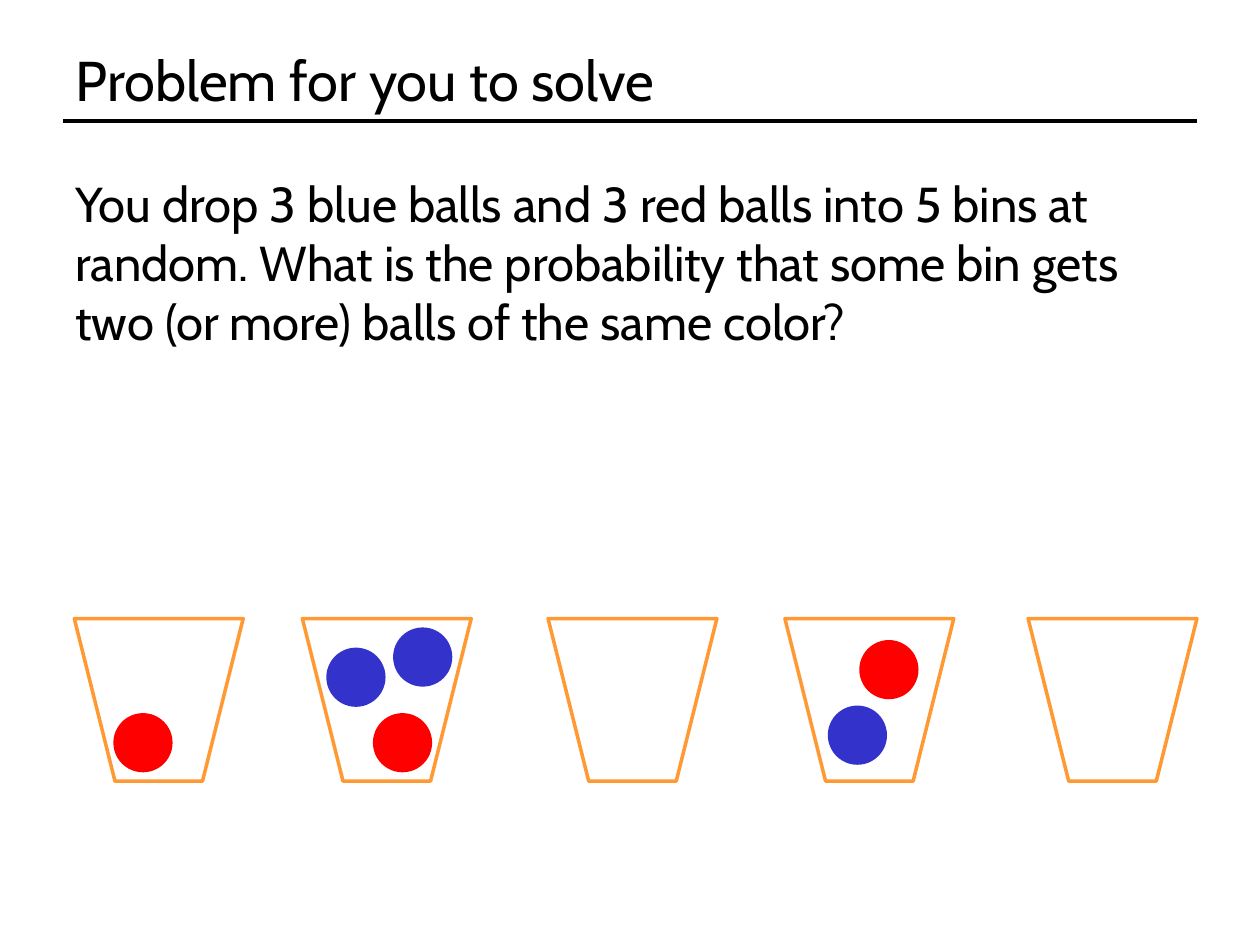
from pptx import Presentation
from pptx.dml.color import RGBColor
from pptx.enum.shapes import MSO_CONNECTOR as Connector, MSO_SHAPE as Shape
from pptx.enum.text import MSO_ANCHOR as Anchor, MSO_AUTO_SIZE as AutoSize, PP_ALIGN as Align
from pptx.oxml.ns import qn
from pptx.util import Pt
from lxml import etree


def color(value):
    return RGBColor.from_string(value)


def write(box, text, size, fill="000000", font="Cabin", anchor=Anchor.TOP):
    frame = box.text_frame
    frame.word_wrap = True
    frame.vertical_anchor = anchor
    para = frame.paragraphs[0]
    para.alignment = Align.LEFT
    span = para.add_run()
    span.text = text
    span.font.name = font
    span.font.size = Pt(size)
    span.font.color.rgb = color(fill)
    return frame


deck = Presentation()
deck.slide_width, deck.slide_height = Pt(720), Pt(540)
page = deck.slides.add_slide(deck.slide_layouts[5])
shapes = page.shapes

rule = shapes.add_connector(Connector.STRAIGHT, Pt(36), Pt(69.12), Pt(684), Pt(69.12))
rule.line.color.rgb = color("000000")
rule.line.width = Pt(2)
etree.SubElement(rule._element.spPr, qn("a:effectLst"))

title = shapes.title
title.left, title.top, title.width, title.height = Pt(36), Pt(21.6), Pt(648), Pt(47.52)
title_frame = write(title, "Problem for you to solve", 32, anchor=Anchor.MIDDLE)
title_frame.auto_size = AutoSize.NONE

question = shapes.add_textbox(Pt(36), Pt(95.76), Pt(648), Pt(108.72))
question_frame = write(
    question,
    "You drop 3 blue balls and 3 red balls into 5 bins at random. "
    "What is the probability that some bin gets two (or more) balls of the same color?",
    28,
)
question_frame.auto_size = AutoSize.SHAPE_TO_FIT_TEXT

for left in (42.48, 172.8, 313.2, 448.56, 587.52):
    bin_shape = shapes.add_shape(Shape.TRAPEZOID, Pt(left), Pt(353.52), Pt(96.48), Pt(92.88))
    bin_shape._element.spPr.find(qn("a:xfrm")).set("flipV", "1")
    bin_shape.shadow.inherit = False
    bin_shape.fill.background()
    bin_shape.line.color.rgb = color("FF9933")
    bin_shape.line.width = Pt(2)

red, blue = "FF0000", "3333CC"
balls = [
    (64.8, 407.52, red),
    (491.04, 365.76, red),
    (213.12, 407.52, red),
    (186.48, 370.08, blue),
    (224.64, 358.56, blue),
    (473.04, 403.2, blue),
]
for left, top, fill in balls:
    ball = shapes.add_shape(Shape.OVAL, Pt(left), Pt(top), Pt(33.84), Pt(33.84))
    ball.shadow.inherit = False
    ball.fill.solid()
    ball.fill.fore_color.rgb = color(fill)
    ball.line.fill.background()

deck.save("out.pptx")
